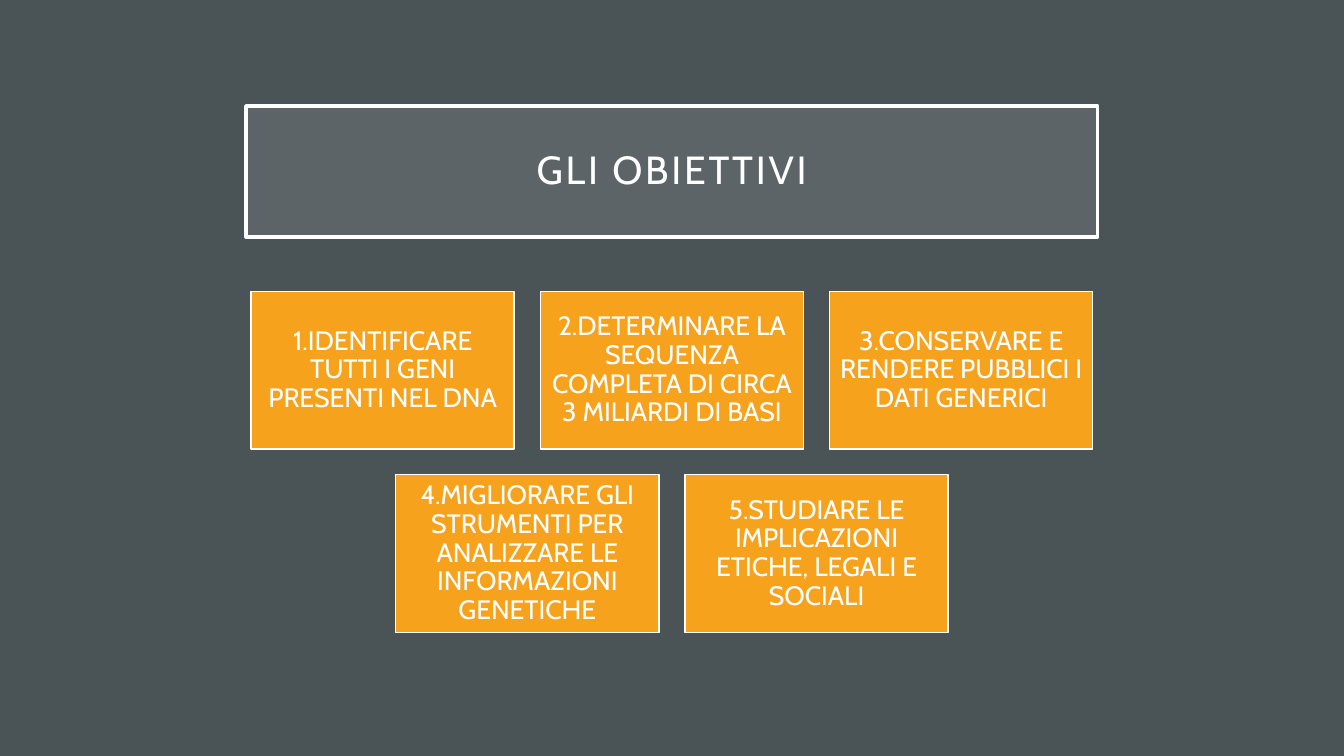
from lxml import etree
from pptx import Presentation
from pptx.dml.color import RGBColor
from pptx.enum.shapes import MSO_SHAPE as SHAPE
from pptx.enum.text import MSO_ANCHOR as ANCHOR, MSO_AUTO_SIZE as AUTOSIZE, PP_ALIGN as ALIGN
from pptx.oxml.ns import qn
from pptx.util import Cm, Pt

# Content
TITLE = "GLI OBIETTIVI"
GOAL_ROWS = [
    ["1.IDENTIFICARE TUTTI I GENI PRESENTI NEL DNA",
     "2.DETERMINARE LA SEQUENZA COMPLETA DI CIRCA 3 MILIARDI DI BASI",
     "3.CONSERVARE E RENDERE PUBBLICI I DATI GENERICI"],
    ["4.MIGLIORARE GLI STRUMENTI PER ANALIZZARE LE INFORMAZIONI GENETICHE",
     "5.STUDIARE LE IMPLICAZIONI ETICHE, LEGALI E SOCIALI"],
]

# Style
SLATE = RGBColor(0x4A, 0x53, 0x56)
ORANGE = RGBColor(0xF6, 0xA2, 0x1D)
WHITE = RGBColor(0xFF, 0xFF, 0xFF)
FONT = "Cabin"

# Layout in centimetres
SLIDE_W, SLIDE_H = 33.87, 19.05
TITLE_BOX = (6.2, 2.67, 21.46, 3.3)
CARD_W, CARD_H = 6.63, 3.98
GAP_X, GAP_Y = 0.66, 0.64
CARDS_TOP = 7.34


def style_box(sp, fill, line_width):
    sp.fill.solid()
    sp.fill.fore_color.rgb = fill
    sp.line.color.rgb = WHITE
    sp.line.width = Pt(line_width)


def write_text(sp, text, size, inset):
    tf = sp.text_frame
    frame_format = {"word_wrap": True, "auto_size": AUTOSIZE.NONE,
                    "vertical_anchor": ANCHOR.MIDDLE}
    for side in ("left", "top", "right", "bottom"):
        frame_format[f"margin_{side}"] = Cm(inset)
    for name, value in frame_format.items():
        setattr(tf, name, value)
    p = tf.paragraphs[0]
    p.alignment = ALIGN.CENTER
    p.line_spacing = 0.9
    r = p.add_run()
    r.text = text
    for name, value in {"name": FONT, "size": Pt(size), "bold": False}.items():
        setattr(r.font, name, value)
    r.font.color.rgb = WHITE
    return r


prs = Presentation()
prs.slide_width, prs.slide_height = Cm(SLIDE_W), Cm(SLIDE_H)
s = prs.slides.add_slide(prs.slide_layouts[5])
s.background.fill.solid()
s.background.fill.fore_color.rgb = SLATE

# Title with a translucent fill and spaced letters
title = s.shapes.title
for name, value in zip(("left", "top", "width", "height"), TITLE_BOX):
    setattr(title, name, Cm(value))
style_box(title, WHITE, 2.5)
color = title.fill._xPr.find(qn("a:solidFill"))[0]
etree.SubElement(color, qn("a:alpha")).set("val", "10000")
r = write_text(title, TITLE, 28, 0.51)
r.font._element.set("spc", "200")

# Goal cards, each row centred on the slide
for row, goals in enumerate(GOAL_ROWS):
    row_w = len(goals) * (CARD_W + GAP_X) - GAP_X
    left = (SLIDE_W - row_w) / 2
    top = CARDS_TOP + row * (CARD_H + GAP_Y)
    for col, goal in enumerate(goals):
        x = left + col * (CARD_W + GAP_X)
        sp = s.shapes.add_shape(SHAPE.RECTANGLE, Cm(x), Cm(top), Cm(CARD_W), Cm(CARD_H))
        sp.shadow.inherit = False
        style_box(sp, ORANGE, 1)
        write_text(sp, goal, 19, 0.2)

prs.save("out.pptx")
